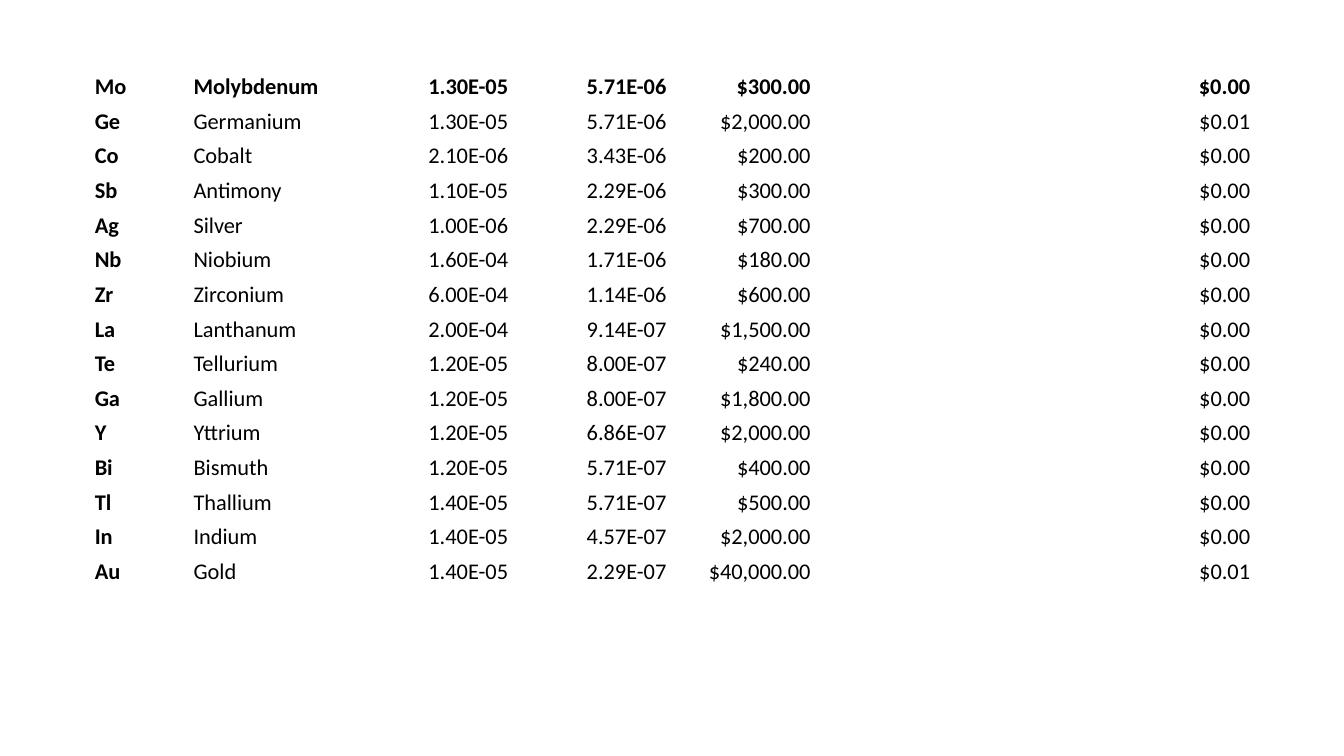
from lxml.etree import SubElement
from pptx import Presentation
from pptx.dml.color import RGBColor
from pptx.enum.text import MSO_ANCHOR, PP_ALIGN
from pptx.oxml.ns import qn
from pptx.util import Inches, Pt

COLORS = {"paper": "FFFFFF", "ink": "000000"}
COLUMN_WIDTHS = [0.98, 1.74, 1.42, 1.57, 1.43, 4.36]
ROW_HEIGHT = 0.344
ELEMENTS = [
    ("Mo", "Molybdenum", "1.30E-05", "5.71E-06", "$300.00", "$0.00"),
    ("Ge", "Germanium", "1.30E-05", "5.71E-06", "$2,000.00", "$0.01"),
    ("Co", "Cobalt", "2.10E-06", "3.43E-06", "$200.00", "$0.00"),
    ("Sb", "Antimony", "1.10E-05", "2.29E-06", "$300.00", "$0.00"),
    ("Ag", "Silver", "1.00E-06", "2.29E-06", "$700.00", "$0.00"),
    ("Nb", "Niobium", "1.60E-04", "1.71E-06", "$180.00", "$0.00"),
    ("Zr", "Zirconium", "6.00E-04", "1.14E-06", "$600.00", "$0.00"),
    ("La", "Lanthanum", "2.00E-04", "9.14E-07", "$1,500.00", "$0.00"),
    ("Te", "Tellurium", "1.20E-05", "8.00E-07", "$240.00", "$0.00"),
    ("Ga", "Gallium", "1.20E-05", "8.00E-07", "$1,800.00", "$0.00"),
    ("Y", "Yttrium", "1.20E-05", "6.86E-07", "$2,000.00", "$0.00"),
    ("Bi", "Bismuth", "1.20E-05", "5.71E-07", "$400.00", "$0.00"),
    ("Tl", "Thallium", "1.40E-05", "5.71E-07", "$500.00", "$0.00"),
    ("In", "Indium", "1.40E-05", "4.57E-07", "$2,000.00", "$0.00"),
    ("Au", "Gold", "1.40E-05", "2.29E-07", "$40,000.00", "$0.01"),
]


def add_border(cell, side, points):
    line = SubElement(cell._tc.get_or_add_tcPr(), qn(f"a:ln{side}"), w=str(Pt(points)))
    fill = SubElement(line, qn("a:solidFill"))
    SubElement(fill, qn("a:srgbClr"), val=COLORS["paper"])


prs = Presentation()
prs.slide_width = Inches(13.33)
prs.slide_height = Inches(7.5)
slide = prs.slides.add_slide(prs.slide_layouts[6])

prices = slide.shapes.add_table(
    len(ELEMENTS), len(COLUMN_WIDTHS), Inches(0.92), Inches(0.68),
    Inches(sum(COLUMN_WIDTHS)), Inches(ROW_HEIGHT * len(ELEMENTS)),
).table
for column, width in zip(prices.columns, COLUMN_WIDTHS):
    column.width = Inches(width)

for row, element in enumerate(ELEMENTS):
    prices.rows[row].height = Inches(ROW_HEIGHT)
    for col, value in enumerate(element):
        cell = prices.cell(row, col)
        cell.vertical_anchor = MSO_ANCHOR.MIDDLE
        cell.margin_left = cell.margin_right = Inches(0.02)
        cell.margin_top = cell.margin_bottom = Inches(0.01)
        for side in "LRTB":
            heavy = (row, side) in ((0, "B"), (1, "T"))
            add_border(cell, side, 3 if heavy else 1)
        cell.fill.solid()
        cell.fill.fore_color.rgb = RGBColor.from_string(COLORS["paper"])

        cell.text = value
        paragraph = cell.text_frame.paragraphs[0]
        paragraph.alignment = PP_ALIGN.LEFT if col < 2 else PP_ALIGN.RIGHT
        paragraph.line_spacing = 1.07
        paragraph.font.name = "Calibri"
        paragraph.font.size = Pt(16)
        paragraph.font.bold = row == 0 or col == 0
        paragraph.font.color.rgb = RGBColor.from_string(COLORS["ink"])

prs.save("out.pptx")
